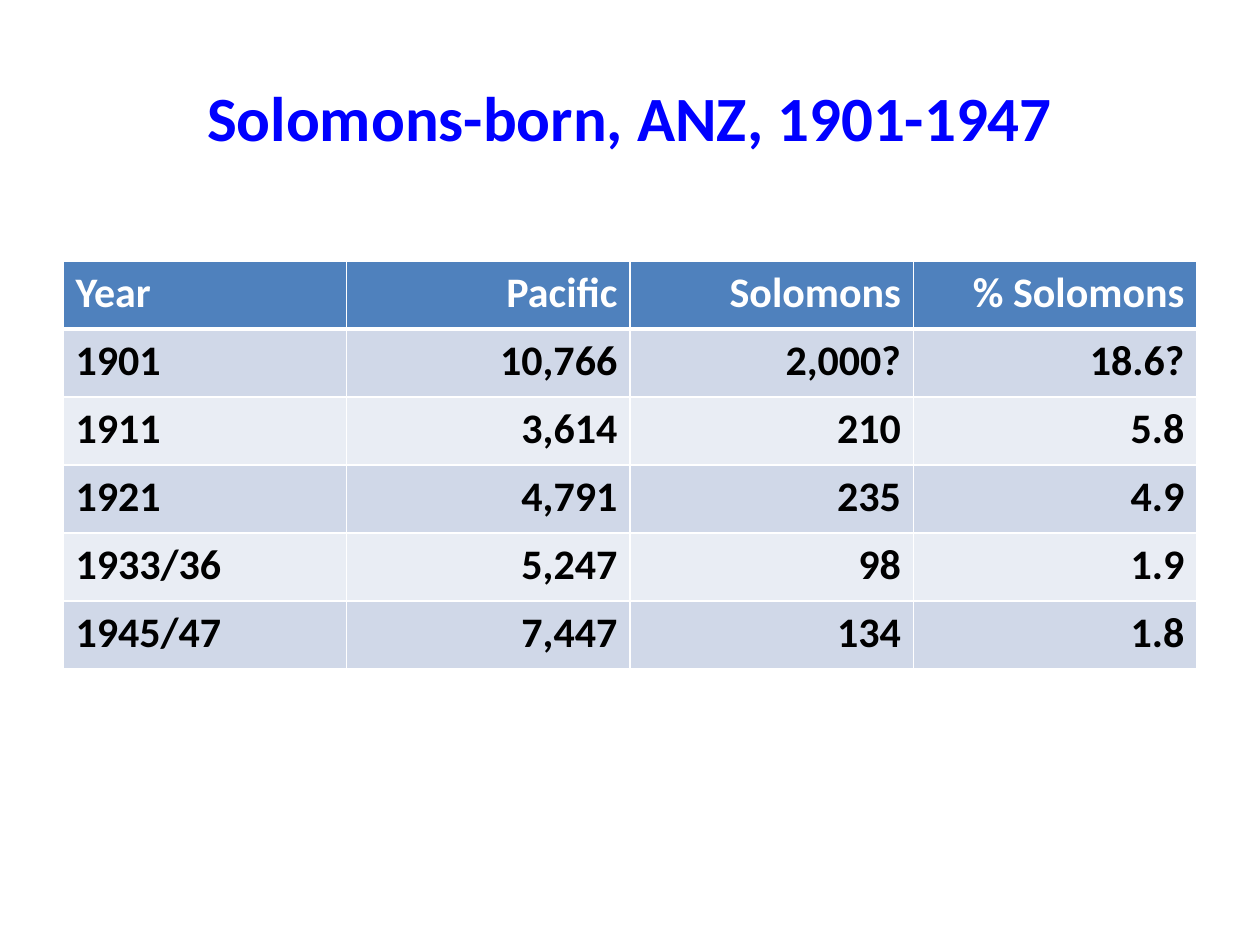
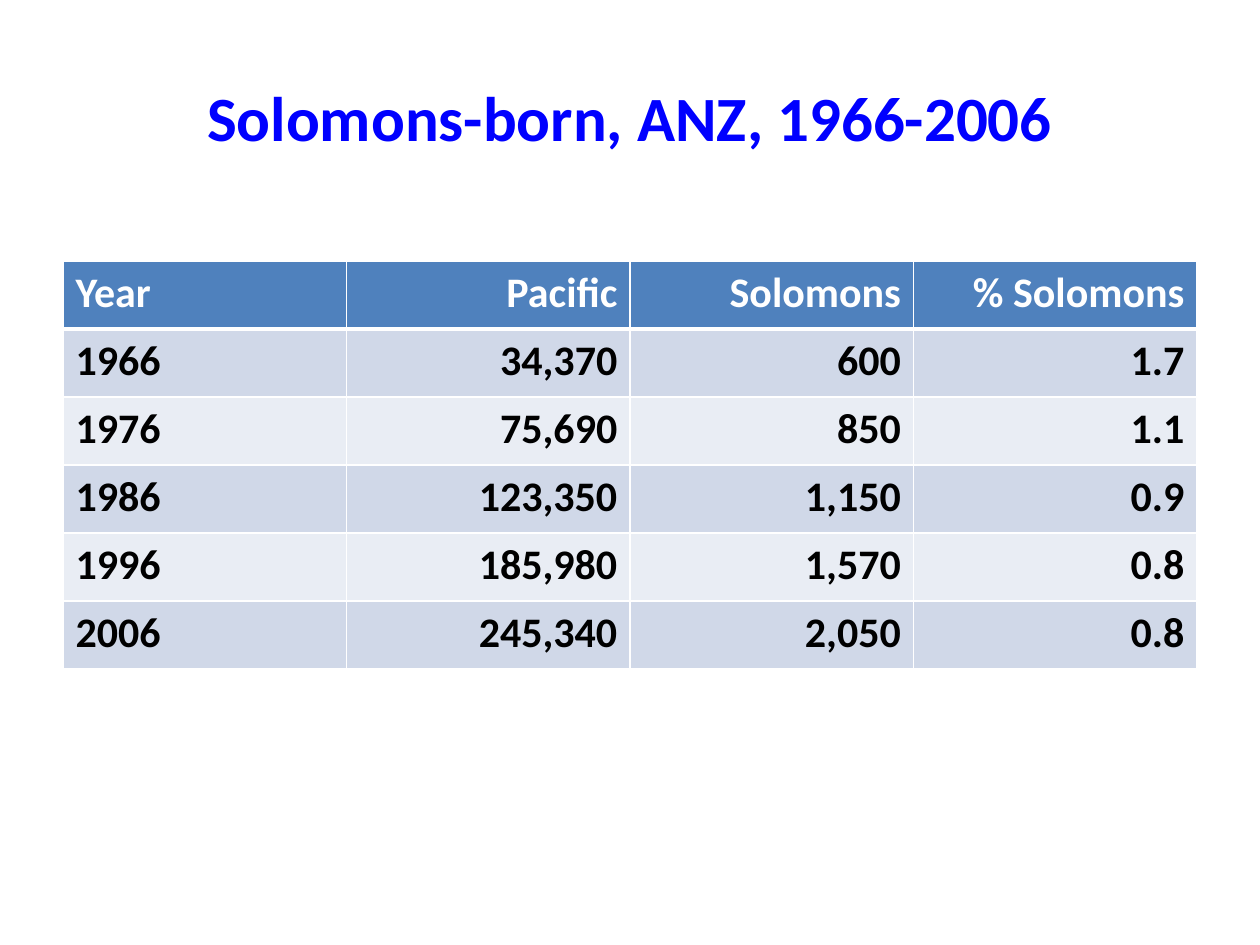
import dataclasses

import pptx
import pptx.dml.color
import pptx.enum.text
import pptx.oxml
import pptx.oxml.ns
import pptx.util
from pptx.util import Inches

ALIGN = pptx.enum.text.PP_ALIGN
ANCHOR = pptx.enum.text.MSO_ANCHOR
TITLE_ONLY = 5


@dataclasses.dataclass(frozen=True)
class Theme:
    font: str = "Calibri"
    title_size: int = 36
    table_size: int = 24
    title: str = "0000FF"
    header_fill: str = "4F81BD"
    header_text: str = "FFFFFF"
    body_text: str = "000000"
    bands: tuple = ("D0D8E8", "E9EDF4")
    border: str = "FFFFFF"
    thin: int = 1
    thick: int = 3


class Deck:
    """Holds the style and the slide being built."""

    def __init__(self, theme):
        self.theme = theme
        self.prs = pptx.Presentation()
        self.prs.slide_width = Inches(10)
        self.prs.slide_height = Inches(7.5)
        self.slide = None

    def add_slide(self, title):
        layout = self.prs.slide_layouts[TITLE_ONLY]
        self.slide = self.prs.slides.add_slide(layout)
        sp = self.slide.shapes.title
        sp.left, sp.top = Inches(0.5), Inches(0.3)
        sp.width, sp.height = Inches(9), Inches(1.25)
        tf = sp.text_frame
        tf.text = title
        tf.vertical_anchor = ANCHOR.MIDDLE
        self.style(tf.paragraphs[0], self.theme.title_size, self.theme.title, ALIGN.CENTER)

    def style(self, p, size, color, align):
        p.alignment = align
        for r in p.runs:
            r.font.name = self.theme.font
            r.font.size = pptx.util.Pt(size)
            r.font.bold = True
            r.font.color.rgb = pptx.dml.color.RGBColor.from_string(color)

    def borders(self, cell, top, bottom):
        thin = self.theme.thin
        sides = {"lnL": thin, "lnR": thin, "lnT": top, "lnB": bottom}
        tc_pr = cell._tc.get_or_add_tcPr()
        for side, width in sides.items():
            tc_pr.append(pptx.oxml.parse_xml(
                f'<a:{side} {pptx.oxml.ns.nsdecls("a")} w="{pptx.util.Pt(width)}">'
                f'<a:solidFill><a:srgbClr val="{self.theme.border}"/></a:solidFill>'
                f'</a:{side}>'))

    def add_table(self, rows):
        t = self.theme
        table = self.slide.shapes.add_table(
            len(rows), len(rows[0]),
            Inches(0.5), Inches(2.07), Inches(9), Inches(0.54) * len(rows)).table
        for i, row in enumerate(rows):
            header = i == 0
            fill = t.header_fill if header else t.bands[(i - 1) % 2]
            color = t.header_text if header else t.body_text
            # The thick rule lies between the header and the first body row
            top = t.thick if i == 1 else t.thin
            bottom = t.thick if header else t.thin
            for j, text in enumerate(row):
                cell = table.cell(i, j)
                self.borders(cell, top, bottom)
                cell.fill.solid()
                cell.fill.fore_color.rgb = pptx.dml.color.RGBColor.from_string(fill)
                cell.text_frame.text = text
                align = ALIGN.LEFT if j == 0 else ALIGN.RIGHT
                self.style(cell.text_frame.paragraphs[0], t.table_size, color, align)


HEADER = ("Year", "Pacific", "Solomons", "% Solomons")

SLIDES = {
    "Solomons-born, ANZ, 1901-1947": [
        ("1901", "10,766", "2,000?", "18.6?"),
        ("1911", "3,614", "210", "5.8"),
        ("1921", "4,791", "235", "4.9"),
        ("1933/36", "5,247", "98", "1.9"),
        ("1945/47", "7,447", "134", "1.8"),
    ],
    "Solomons-born, ANZ, 1966-2006": [
        ("1966", "34,370", "600", "1.7"),
        ("1976", "75,690", "850", "1.1"),
        ("1986", "123,350", "1,150", "0.9"),
        ("1996", "185,980", "1,570", "0.8"),
        ("2006", "245,340", "2,050", "0.8"),
    ],
}


def main():
    deck = Deck(Theme())
    # One title and one census table per slide
    for title, rows in SLIDES.items():
        deck.add_slide(title)
        deck.add_table([HEADER, *rows])
    deck.prs.save("out.pptx")


if __name__ == "__main__":
    main()
